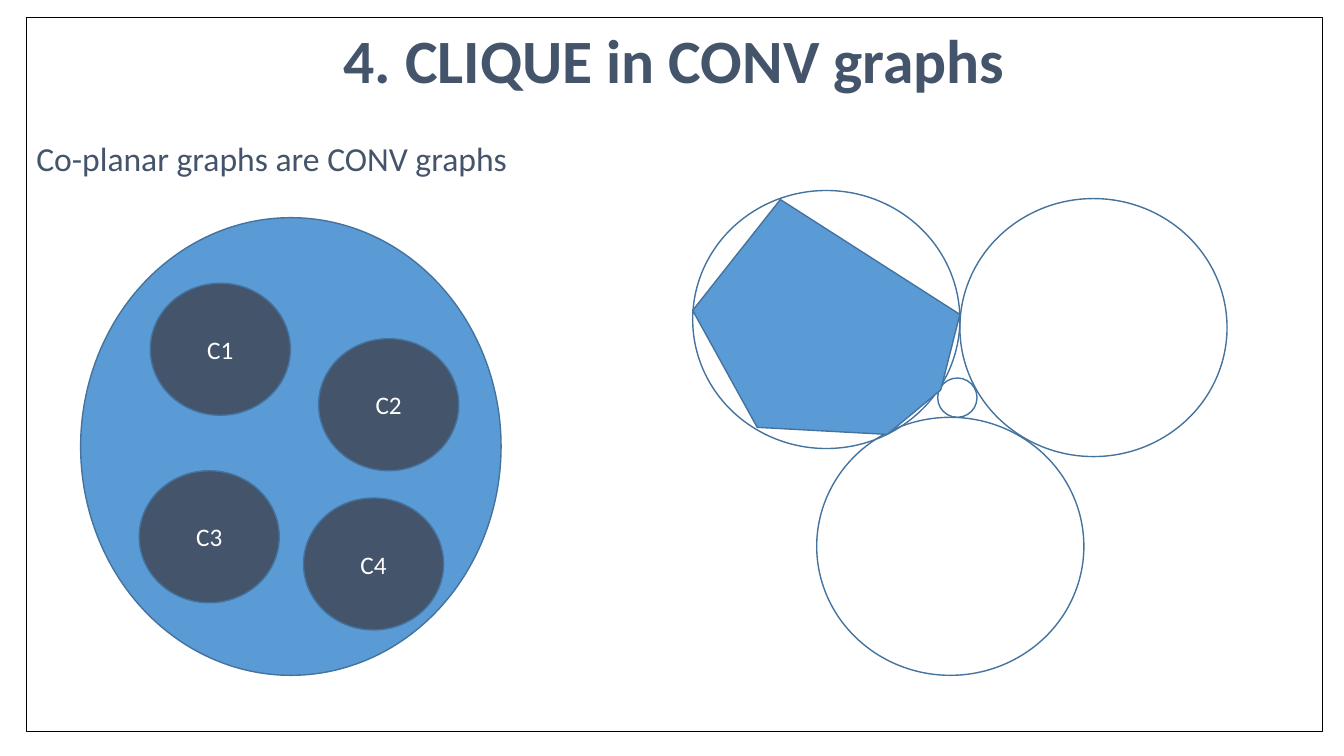
from dataclasses import dataclass

from lxml import etree
from pptx import Presentation
from pptx import util as u
from pptx.dml.color import RGBColor
from pptx.enum import shapes, text
from pptx.oxml.ns import qn

FONT = "Calibri"
SLATE, BLUE, OUTLINE = "44546A", "5B9BD5", "43739E"
WHITE, BLACK = "FFFFFF", "000000"


@dataclass
class Ellipse:
    left: float
    top: float
    width: float
    height: float
    fill: str | None = None
    label: str = ""


def rgb(code: str) -> RGBColor:
    return RGBColor.from_string(code)


def paint(sp, fill: str | None, line: str, weight: float) -> None:
    sp.shadow.inherit = False
    if fill:
        sp.fill.solid()
        sp.fill.fore_color.rgb = rgb(fill)
    else:
        sp.fill.background()
    sp.line.color.rgb = rgb(line)
    sp.line.width = u.Pt(weight)


def write(sp, words: str, size: float, color: str, align, anchor, bold: bool = False) -> None:
    tf = sp.text_frame
    tf.text = words
    tf.word_wrap = True
    tf.auto_size = text.MSO_AUTO_SIZE.NONE
    tf.vertical_anchor = anchor
    p = tf.paragraphs[0]
    p.alignment = align
    p.space_before = u.Pt(0)
    font = p.runs[0].font
    font.name, font.size, font.bold = FONT, u.Pt(size), bold
    font.color.rgb = rgb(color)


def place(sp, left: float, top: float, width: float, height: float) -> None:
    sp.left, sp.top = u.Inches(left), u.Inches(top)
    sp.width, sp.height = u.Inches(width), u.Inches(height)


def add_ellipse(slide, e: Ellipse) -> None:
    sp = slide.shapes.add_shape(
        shapes.MSO_SHAPE.OVAL, *map(u.Inches, (e.left, e.top, e.width, e.height)))
    paint(sp, e.fill, OUTLINE, 1)
    if e.label:
        write(sp, e.label, 18, WHITE, text.PP_ALIGN.CENTER, text.MSO_ANCHOR.MIDDLE)


def add_polygon(slide, points: list[tuple[float, float]]) -> None:
    start, *rest = [(u.Inches(x), u.Inches(y)) for x, y in points]
    builder = slide.shapes.build_freeform(*start)
    builder.add_line_segments(rest, close=True)
    paint(builder.convert_to_shape(), BLUE, OUTLINE, 1)


def add_frame(slide) -> None:
    sp = slide.shapes.add_shape(
        shapes.MSO_SHAPE.RECTANGLE, *map(u.Inches, (0.26, 0.17, 12.86, 7.09)))
    paint(sp, WHITE, BLACK, 0.75)
    slide.shapes.title.element.addprevious(sp.element)


def add_headings(slide) -> None:
    title, body = slide.placeholders
    place(title, 0.26, 0.17, 12.86, 0.85)
    write(title, "4. CLIQUE in CONV graphs", 44, SLATE,
          text.PP_ALIGN.CENTER, text.MSO_ANCHOR.TOP, bold=True)
    place(body, 0.26, 1.32, 12.86, 0.5)
    write(body, "Co-planar graphs are CONV graphs", 24, SLATE,
          text.PP_ALIGN.LEFT, text.MSO_ANCHOR.TOP)
    pPr = body.text_frame.paragraphs[0]._p.get_or_add_pPr()
    pPr.set("marL", "0")
    pPr.set("indent", "0")
    etree.SubElement(pPr, qn("a:buNone"))


SET = Ellipse(0.8, 2.16, 4.17, 4.54, BLUE)
CLIQUE_CORNERS = [(1.49, 2.81), (3.16, 3.36), (1.38, 4.67), (3.01, 4.94)]
CLIQUES = [Ellipse(x, y, 1.39, 1.31, SLATE, f"C{i}")
           for i, (x, y) in enumerate(CLIQUE_CORNERS, 1)]
DISKS = [Ellipse(x, y, 2.65, 2.56) for x, y in [(6.87, 1.89), (9.52, 1.97), (8.1, 4.14)]]
SMALL_DISK = Ellipse(9.3, 3.75, 0.39, 0.39)
CONVEX_SET = [(7.74, 1.98), (9.52, 3.12), (9.33, 3.87), (8.8, 4.31), (7.51, 4.24), (6.87, 3.08)]


def main() -> None:
    prs = Presentation()
    prs.slide_width, prs.slide_height = u.Inches(13.33), u.Inches(7.5)
    slide = prs.slides.add_slide(prs.slide_layouts[1])
    add_headings(slide)
    add_frame(slide)
    for e in [SET, *CLIQUES, *DISKS, SMALL_DISK]:
        add_ellipse(slide, e)
    add_polygon(slide, CONVEX_SET)
    prs.save("out.pptx")


if __name__ == "__main__":
    main()
